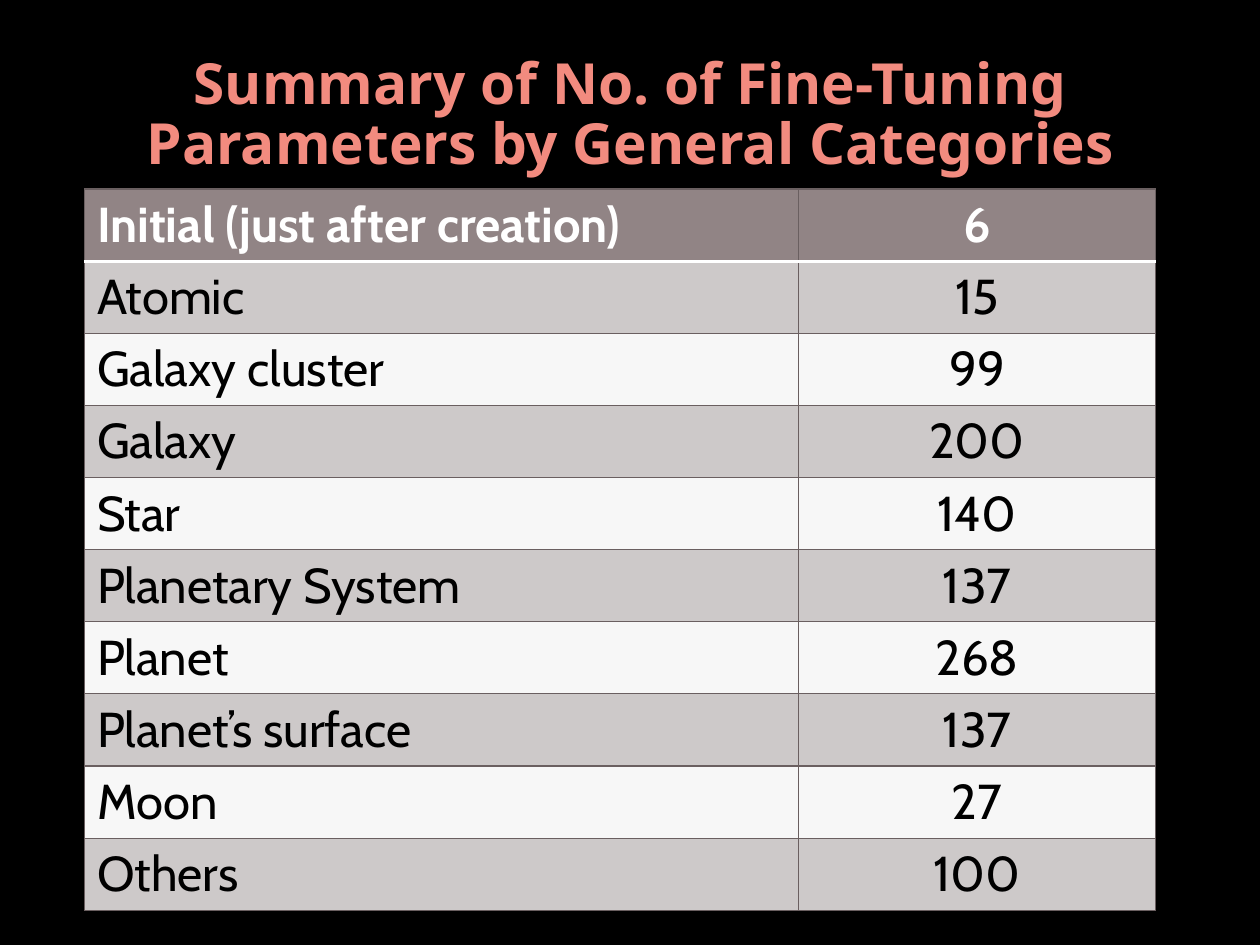
from pptx import Presentation
from pptx.dml.color import RGBColor
from pptx.enum.text import MSO_ANCHOR, MSO_AUTO_SIZE, PP_ALIGN
from pptx.oxml.ns import qn
from pptx.util import Inches, Pt
from lxml.etree import SubElement

COLORS = {
    "background": "000000",
    "title": "F28B7F",
    "header": "918485",
    "band": "CDC9C9",
    "plain": "F7F7F7",
    "border": "6A5F60",
    "light": "FFFFFF",
    "dark": "000000",
}
TITLE = "Summary of No. of Fine-Tuning Parameters by General Categories"
CATEGORIES = [
    ("Initial (just after creation)", 6),
    ("Atomic", 15),
    ("Galaxy cluster", 99),
    ("Galaxy", 200),
    ("Star", 140),
    ("Planetary System", 137),
    ("Planet", 268),
    ("Planet’s surface", 137),
    ("Moon", 27),
    ("Others", 100),
]
COLUMN_WIDTHS = (5.67, 2.83)
ROW_HEIGHT = 0.57


def rgb(name):
    return RGBColor.from_string(COLORS[name])


def write(frame, text, align, color, **font_values):
    para = frame.paragraphs[0]
    para.alignment = align
    span = para.add_run()
    span.text = text
    for key, value in font_values.items():
        setattr(span.font, key, value)
    span.font.color.rgb = rgb(color)
    return para


def add_title(page):
    box = page.shapes.title
    box.left, box.top, box.width, box.height = map(Inches, (0.5, 0.3, 9, 1.25))
    frame = box.text_frame
    frame.word_wrap = True
    frame.auto_size = MSO_AUTO_SIZE.NONE
    frame.vertical_anchor = MSO_ANCHOR.MIDDLE
    para = write(frame, TITLE, PP_ALIGN.CENTER, "title",
                 name="Noto Sans", size=Pt(32.4), bold=True)
    para.line_spacing = 0.88


def set_border(cell, side, color, width):
    """Draw one side (L, R, T or B); call before the cell is filled."""
    line = SubElement(cell._tc.get_or_add_tcPr(), qn(f"a:ln{side}"), w=str(Pt(width)))
    fill = SubElement(line, qn("a:solidFill"))
    SubElement(fill, qn("a:srgbClr"), val=COLORS[color])


def style_cell(cell, row):
    for side in "LRTB":
        under_header = (row, side) in ((0, "B"), (1, "T"))
        set_border(cell, side, *(("light", 2) if under_header else ("border", 0.75)))
    cell.fill.solid()
    fill = "header" if row == 0 else "band" if row % 2 else "plain"
    cell.fill.fore_color.rgb = rgb(fill)


def add_category_table(page):
    table = page.shapes.add_table(
        len(CATEGORIES), len(COLUMN_WIDTHS), Inches(0.67), Inches(1.5),
        Inches(sum(COLUMN_WIDTHS)), Inches(ROW_HEIGHT * len(CATEGORIES))).table
    for column, width in zip(table.columns, COLUMN_WIDTHS):
        column.width = Inches(width)
    for row, values in enumerate(CATEGORIES):
        table.rows[row].height = Inches(ROW_HEIGHT)
        for column, value in enumerate(values):
            cell = table.cell(row, column)
            style_cell(cell, row)
            write(cell.text_frame, str(value),
                  PP_ALIGN.CENTER if column else PP_ALIGN.LEFT,
                  "dark" if row else "light",
                  name="Cabin", size=Pt(28), bold=row == 0)


def main():
    deck = Presentation()
    deck.slide_width, deck.slide_height = Inches(10), Inches(7.5)
    page = deck.slides.add_slide(deck.slide_layouts[5])
    page.background.fill.solid()
    page.background.fill.fore_color.rgb = rgb("background")
    add_title(page)
    add_category_table(page)
    deck.save("out.pptx")


if __name__ == "__main__":
    main()
